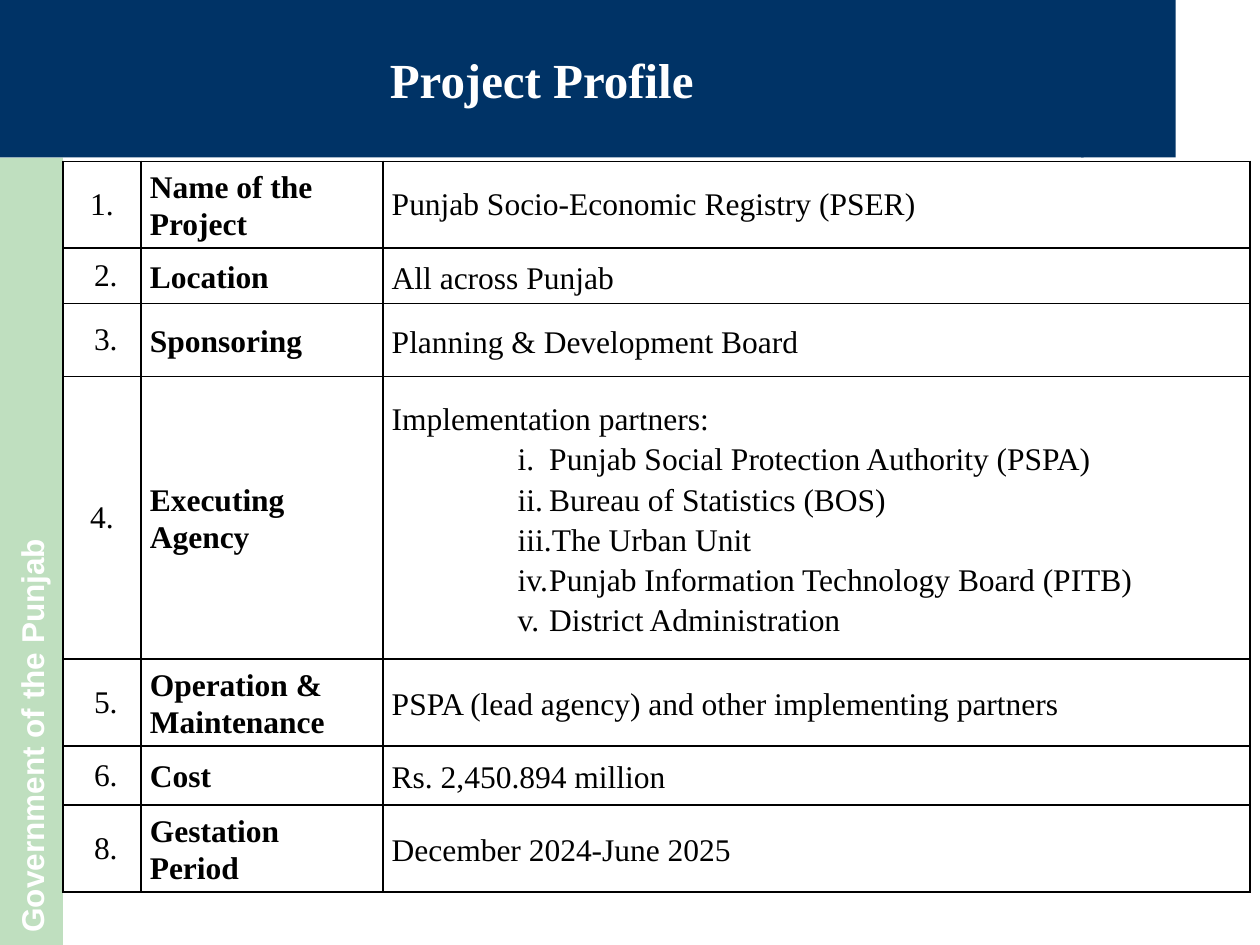
from pptx import Presentation
from pptx.dml.color import RGBColor
from pptx.enum.shapes import MSO_SHAPE
from pptx.enum.text import MSO_ANCHOR, PP_ALIGN
from pptx.oxml import parse_xml
from pptx.oxml.ns import nsdecls
from pptx.util import Inches, Pt

RECTANGLE = MSO_SHAPE.RECTANGLE
MIDDLE = MSO_ANCHOR.MIDDLE
LEFT, CENTER, JUSTIFY = PP_ALIGN.LEFT, PP_ALIGN.CENTER, PP_ALIGN.JUSTIFY

COLORS = {"navy": "003366", "green": "008000", "white": "FFFFFF", "black": "000000"}
SERIF, SANS = "Times New Roman", "Arial"

COLUMN_WIDTHS = [0.62, 1.92, 6.88]
PARTNERS = [
    "Punjab Social Protection Authority (PSPA)",
    "Bureau of Statistics (BOS)",
    "The Urban Unit",
    "Punjab Information Technology Board (PITB)",
    "District Administration",
]
# Row height, number, number's left margin, label, value, value alignment, line spacing
ROWS = [
    (0.69, "1.", 0.1, "Name of the Project", "Punjab Socio-Economic Registry (PSER)", LEFT, 1.0),
    (0.44, "2.", 0.16, "Location", "All across Punjab", JUSTIFY, 1.15),
    (0.58, "3.", 0.16, "Sponsoring", "Planning & Development Board", JUSTIFY, 1.15),
    (2.24, "4.", 0.1, "Executing Agency", "Implementation partners:", LEFT, 1.15),
    (0.69, "5.", 0.16, "Operation & Maintenance",
     "PSPA (lead agency) and other implementing partners", LEFT, 1.15),
    (0.47, "6.", 0.16, "Cost", "Rs. 2,450.894 million", LEFT, 1.14),
    (0.69, "8.", 0.16, "Gestation Period", "December 2024-June 2025", LEFT, 1.14),
]
PARTNERS_ROW = 3


class ProfileSlide:
    def __init__(self, slide):
        self.slide = slide

    def format_paragraph(self, paragraph, color, size=18, bold=False, font=SERIF,
                         align=LEFT, spacing=1.0):
        paragraph.alignment = align
        paragraph.line_spacing = spacing
        for run in paragraph.runs:
            run.font.name = font
            run.font.size = Pt(size)
            run.font.bold = bold
            run.font.color.rgb = RGBColor.from_string(COLORS[color])

    def rectangle(self, left, top, width, height, color, opacity=None):
        shape = self.slide.shapes.add_shape(
            RECTANGLE, Inches(left), Inches(top), Inches(width), Inches(height))
        shape.shadow.inherit = False
        shape.fill.solid()
        shape.fill.fore_color.rgb = RGBColor.from_string(COLORS[color])
        shape.line.fill.background()
        if opacity is not None:
            color_element = shape.fill._xPr.solidFill[0]
            color_element.append(parse_xml(
                f'<a:alpha {nsdecls("a")} val="{opacity * 1000}"/>'))
        return shape

    def label(self, shape, text, **style):
        text_frame = shape.text_frame
        text_frame.word_wrap = True
        text_frame.vertical_anchor = MIDDLE
        text_frame.text = text
        self.format_paragraph(text_frame.paragraphs[0], "white", bold=True, **style)

    def table(self, left, top, widths, heights):
        frame = self.slide.shapes.add_table(
            len(heights), len(widths), Inches(left), Inches(top),
            Inches(sum(widths)), Inches(sum(heights)))
        table = frame.table
        table.first_row = False
        table.horz_banding = False
        for column, width in zip(table.columns, widths):
            column.width = Inches(width)
        for row, height in zip(table.rows, heights):
            row.height = Inches(height)
        return table

    def cell(self, cell, text, margins, **style):
        cell.fill.background()
        cell.vertical_anchor = MIDDLE
        (cell.margin_left, cell.margin_top,
         cell.margin_right, cell.margin_bottom) = map(Inches, margins)
        cell.text_frame.text = text
        self.format_paragraph(cell.text_frame.paragraphs[0], "black", **style)
        properties = cell._tc.get_or_add_tcPr()
        for position, side in enumerate("LRTB"):
            properties.insert(position, parse_xml(
                f'<a:ln{side} {nsdecls("a")} w="{Pt(1)}"><a:solidFill>'
                f'<a:srgbClr val="{COLORS["black"]}"/></a:solidFill></a:ln{side}>'))

    def numbered_item(self, cell, text, spacing):
        paragraph = cell.text_frame.add_paragraph()
        paragraph.text = text
        self.format_paragraph(paragraph, "black", spacing=spacing)
        properties = paragraph._p.get_or_add_pPr()
        properties.set("marL", str(Inches(1.25)))
        properties.set("indent", str(Inches(-0.25)))
        properties.append(parse_xml(
            f'<a:buAutoNum {nsdecls("a")} type="romanLcPeriod"/>'))


def main():
    presentation = Presentation()
    presentation.slide_width, presentation.slide_height = Inches(10), Inches(7.5)
    page = ProfileSlide(presentation.slides.add_slide(presentation.slide_layouts[6]))

    # Side band with text running upwards
    page.rectangle(8.58, 0, 0.75, 1.25, "navy")
    band = page.rectangle(0, 1.25, 0.5, 6.25, "green", opacity=25)
    page.label(band, "Government of the Punjab", font=SANS)
    band.text_frame._txBody.bodyPr.set("vert", "vert270")

    # Title bar
    title = page.rectangle(0, 0, 8.6, 1.25, "navy")
    page.label(title, "Project Profile", size=28, align=CENTER)

    # Profile table
    table = page.table(0.5, 1.28, COLUMN_WIDTHS, [row[0] for row in ROWS])
    for index, (_, number, indent, name, value, align, spacing) in enumerate(ROWS):
        page.cell(table.cell(index, 0), number, (indent, 0.05, 0.1, 0.05), align=CENTER)
        page.cell(table.cell(index, 1), name, (0.07, 0.01, 0.07, 0),
                  bold=True, spacing=1.07)
        page.cell(table.cell(index, 2), value, (0.07, 0, 0.07, 0),
                  align=align, spacing=spacing)

    # Implementation partners
    for partner in PARTNERS:
        page.numbered_item(table.cell(PARTNERS_ROW, 2), partner, spacing=1.15)

    presentation.save("out.pptx")


if __name__ == "__main__":
    main()
